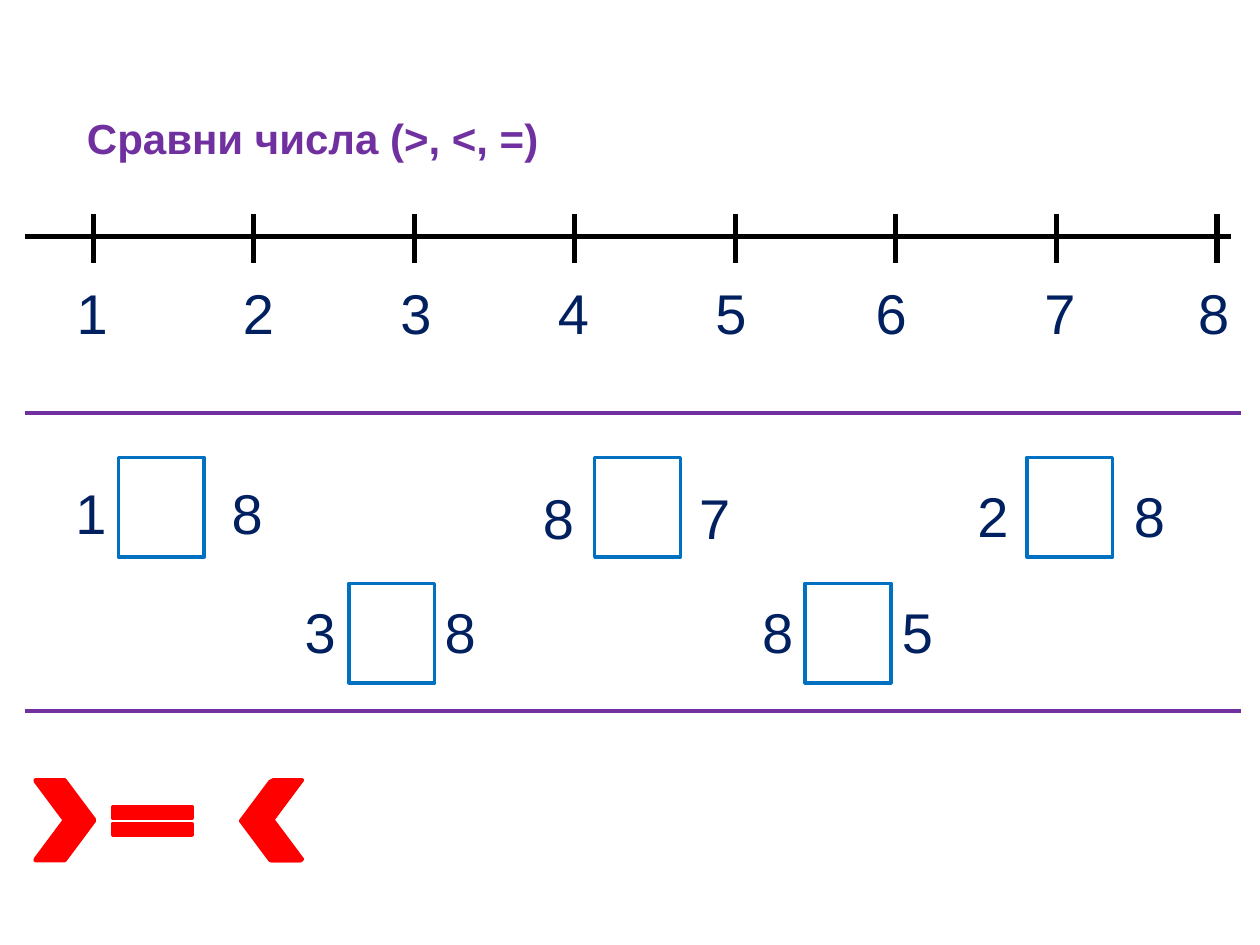
from lxml import etree
from pptx import Presentation
from pptx.dml.color import RGBColor
from pptx.enum.shapes import MSO_CONNECTOR, MSO_SHAPE
from pptx.enum.text import MSO_ANCHOR, MSO_AUTO_SIZE, PP_ALIGN
from pptx.oxml.ns import qn
from pptx.util import Inches, Pt

PURPLE = RGBColor(0x70, 0x30, 0xA0)
NAVY = RGBColor(0x00, 0x20, 0x60)
BLUE = RGBColor(0x00, 0x70, 0xC0)
RED = RGBColor(0xFF, 0x00, 0x00)
BLACK = RGBColor(0x00, 0x00, 0x00)


def style_paragraph(paragraph, size, color, bold=False):
    paragraph.alignment = PP_ALIGN.LEFT
    paragraph.font.name = "Arial"
    paragraph.font.size = Pt(size)
    paragraph.font.bold = bold
    paragraph.font.color.rgb = color


def add_line(slide, x1, y1, x2, y2, color, width):
    line = slide.shapes.add_connector(
        MSO_CONNECTOR.STRAIGHT, Inches(x1), Inches(y1), Inches(x2), Inches(y2))
    line.line.color.rgb = color
    line.line.width = Pt(width)
    etree.SubElement(line._element.spPr, qn("a:effectLst"))


def add_number_text(slide, text, left, top, width, tab=None):
    frame = slide.shapes.add_textbox(
        Inches(left), Inches(top), Inches(width), Inches(0.64)).text_frame
    frame.word_wrap = True
    frame.auto_size = MSO_AUTO_SIZE.SHAPE_TO_FIT_TEXT
    paragraph = frame.paragraphs[0]
    paragraph.add_run().text = text
    if tab:
        tabs = etree.SubElement(paragraph._p.get_or_add_pPr(), qn("a:tabLst"))
        etree.SubElement(tabs, qn("a:tab"), pos=str(Inches(tab)), algn="l")
    style_paragraph(paragraph, 32, NAVY)


def add_outlined_shape(slide, kind, left, top, width, height, color, filled):
    shape = slide.shapes.add_shape(
        kind, Inches(left), Inches(top), Inches(width), Inches(height))
    shape.shadow.inherit = False
    shape.line.color.rgb = color
    shape.line.width = Pt(2)
    if filled:
        shape.fill.solid()
        shape.fill.fore_color.rgb = color
    else:
        shape.fill.background()
    return shape


def place_title(slide, left, top, width, height):
    title = slide.shapes.title
    title.left, title.top = Inches(left), Inches(top)
    title.width, title.height = Inches(width), Inches(height)
    frame = title.text_frame
    frame.text = "Сравни числа (>, <, =)"
    frame.vertical_anchor = MSO_ANCHOR.TOP
    frame.auto_size = MSO_AUTO_SIZE.NONE
    style_paragraph(frame.paragraphs[0], 24, PURPLE, bold=True)


def add_number_line(slide, left, top, width, height):
    axis_y = top + 0.18
    add_line(slide, left, axis_y, left + width, axis_y, BLACK, 3)
    first_tick, tick_step = left + 0.54, 1.274
    label_offsets = [0.31, 1.63, 2.88, 4.13, 5.38, 6.65, 7.99, 9.21]
    for index, offset in enumerate(label_offsets):
        tick_x = first_tick + index * tick_step
        add_line(slide, tick_x, top, tick_x, top + 0.39, BLACK, 3)
        add_number_text(slide, str(index + 1), left + offset, top + height - 0.64, 0.39)


def add_comparisons(slide, left, top, width, height):
    for y in (top, top + height):
        add_line(slide, left, y, left + width, y, PURPLE, 2.25)
    upper, lower = top + 0.35, top + 1.35
    comparisons = [
        ("1", "8", 0.5, 3.75, 1.73, 1.24, 0.94, upper),
        ("8", "7", 4.21, 3.79, 1.73, 1.24, 4.72, upper),
        ("2", "8", 7.66, 3.77, 2.06, 1.24, 8.15, upper),
        ("3", "8", 2.32, 4.69, 1.73, 1.11, 2.77, lower),
        ("8", "5", 5.95, 4.69, 1.73, 1.11, 6.39, lower),
    ]
    for first, second, text_x, text_y, text_width, tab, square_x, square_y in comparisons:
        add_number_text(slide, f"{first}\t{second}", text_x, text_y, text_width, tab)
        add_outlined_shape(slide, MSO_SHAPE.RECTANGLE, square_x, square_y, 0.68, 0.79, BLUE, False)


def add_sign_cards(slide, left, top, height):
    sign_width = 0.47
    less_stack = [(1.63, 0.01), (1.64, 0.01), (1.65, 0)]
    greater_stack = [(0, 0.01), (0, 0)]
    for stack, rotation in ((less_stack, 180), (greater_stack, 0)):
        for dx, dy in stack:
            sign = add_outlined_shape(
                slide, MSO_SHAPE.CHEVRON, left + dx, top + dy, sign_width, height, RED, True)
            sign.rotation = rotation
    add_outlined_shape(slide, MSO_SHAPE.MATH_EQUAL, left + 0.5, top + 0.13, 0.86, 0.39, RED, True)


def main():
    presentation = Presentation()
    presentation.slide_width = Inches(10)
    presentation.slide_height = Inches(7.5)
    slide = presentation.slides.add_slide(presentation.slide_layouts[5])
    place_title(slide, 0.59, 0.84, 7.91, 0.5)
    add_number_line(slide, 0.2, 1.7, 9.57, 1.1)
    add_comparisons(slide, 0.2, 3.28, 9.65, 2.36)
    add_sign_cards(slide, 0.28, 6.19, 0.63)
    presentation.save("out.pptx")


if __name__ == "__main__":
    main()
